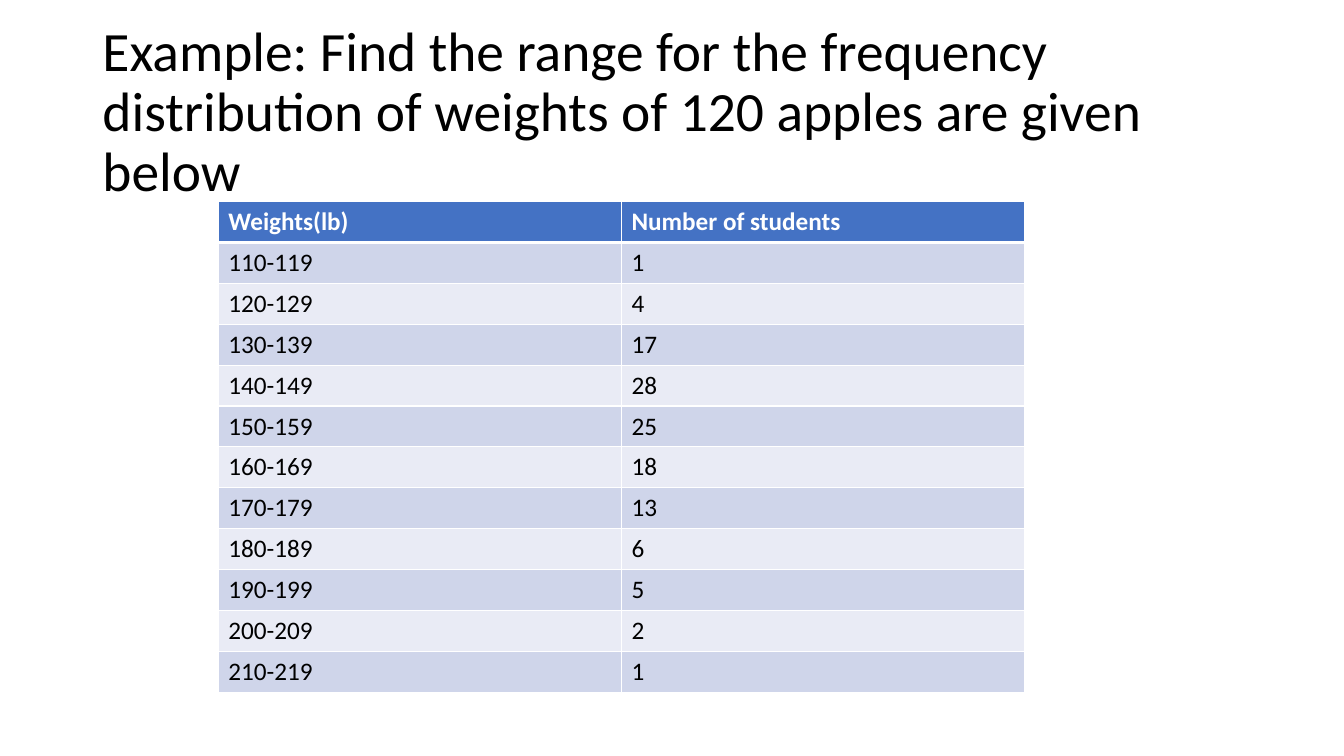
from lxml.etree import SubElement
from pptx import Presentation
from pptx.dml.color import RGBColor as RGB
from pptx.enum.text import MSO_ANCHOR as ANCHOR, MSO_AUTO_SIZE as AUTOSIZE, PP_ALIGN as ALIGN
from pptx.oxml.ns import qn
from pptx.util import Pt

COLORS = {"header": "4472C4", "odd": "CFD5EA", "even": "E9EBF5",
          "white": "FFFFFF", "black": "000000"}
HEADER = ("Weights(lb)", "Number of students")
COUNTS = (1, 4, 17, 28, 25, 18, 13, 6, 5, 2, 1)


def add_run(p, text, size, color, bold=False):
    r = p.add_run()
    r.text = text
    r.font.name = "Calibri"
    r.font.size = Pt(size)
    r.font.bold = bold
    r.font.color.rgb = RGB.from_string(COLORS[color])


def add_border(cell, side, width):
    ln = SubElement(cell._tc.get_or_add_tcPr(), qn(f"a:ln{side}"), w=str(Pt(width)))
    fill = SubElement(ln, qn("a:solidFill"))
    SubElement(fill, qn("a:srgbClr"), val=COLORS["white"])


prs = Presentation()
prs.slide_width, prs.slide_height = Pt(960), Pt(540)
slide = prs.slides.add_slide(prs.slide_layouts[5])

# Title
title = slide.shapes.title
title.left, title.top, title.width, title.height = Pt(66), Pt(28.75), Pt(828), Pt(104.4)
tf = title.text_frame
tf.word_wrap = True
tf.auto_size = AUTOSIZE.NONE
tf.vertical_anchor = ANCHOR.MIDDLE
p = tf.paragraphs[0]
p.alignment = ALIGN.LEFT
p.line_spacing = 0.9
add_run(p, "Example: Find the range for the frequency distribution of weights "
           "of 120 apples are given below", 39.6, "black")

# Frequency table: classes of width 10 starting at 110
rows = [HEADER]
for i, count in enumerate(COUNTS):
    low = 110 + 10 * i
    rows.append((f"{low}-{low + 9}", str(count)))

row_height = 29.2
table = slide.shapes.add_table(len(rows), 2, Pt(156), Pt(144),
                               Pt(576), Pt(row_height * len(rows))).table
for i, row in enumerate(rows):
    table.rows[i].height = Pt(row_height)
    is_header = i == 0
    band = "header" if is_header else "odd" if i % 2 else "even"
    for j, text in enumerate(row):
        cell = table.cell(i, j)
        add_run(cell.text_frame.paragraphs[0], text, 18,
                "white" if is_header else "black", is_header)
        # Borders, with a thick rule under the header
        for side in "LRTB":
            thick = (i, side) in ((0, "B"), (1, "T"))
            add_border(cell, side, 3 if thick else 1)
        cell.fill.solid()
        cell.fill.fore_color.rgb = RGB.from_string(COLORS[band])

prs.save("out.pptx")
